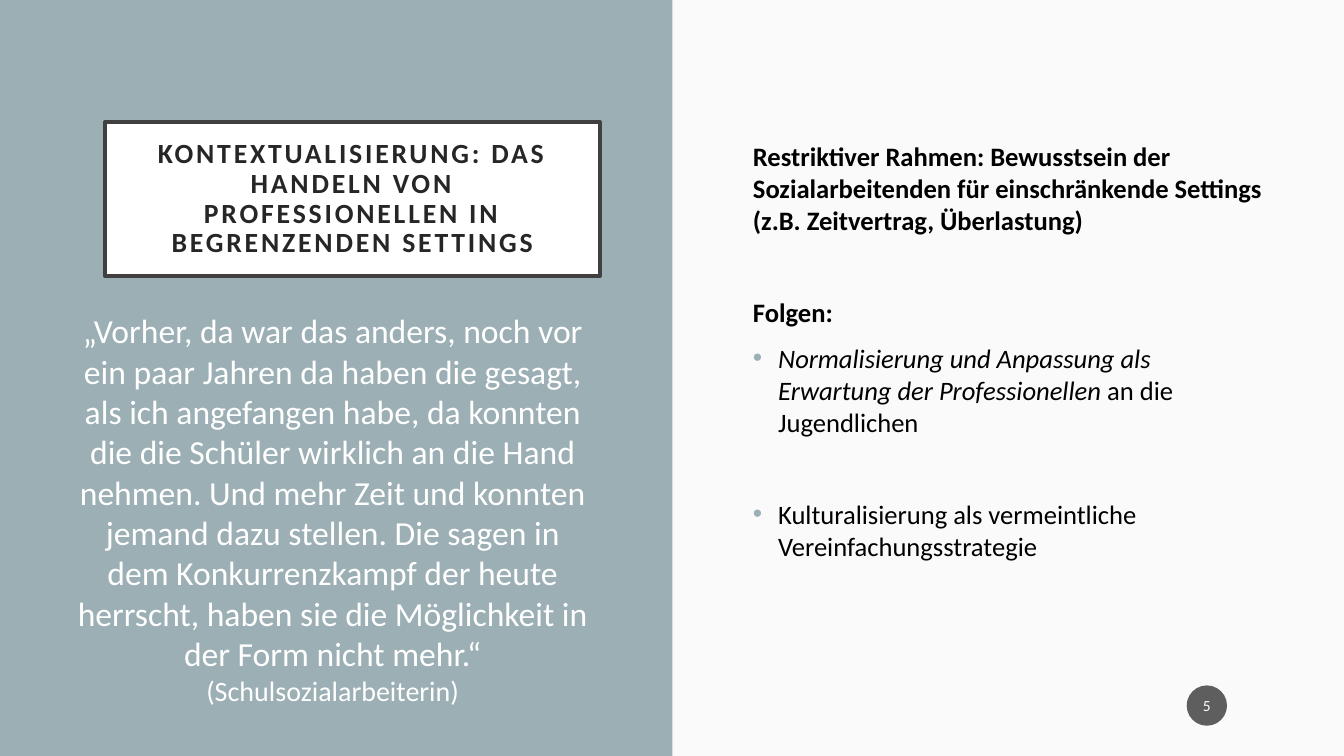
from lxml import etree
from pptx import Presentation
from pptx.dml.color import RGBColor
from pptx.enum.shapes import MSO_SHAPE
from pptx.enum.text import MSO_ANCHOR, MSO_AUTO_SIZE, PP_ALIGN
from pptx.oxml.ns import qn
from pptx.util import Inches, Pt

RECTANGLE, OVAL = MSO_SHAPE.RECTANGLE, MSO_SHAPE.OVAL
LEFT, CENTER = PP_ALIGN.LEFT, PP_ALIGN.CENTER
TOP, MIDDLE = MSO_ANCHOR.TOP, MSO_ANCHOR.MIDDLE
FIXED_SIZE = MSO_AUTO_SIZE.NONE

FONT = "Calibri"
ACCENT, WHITE, BLACK = "9BAFB5", "FFFFFF", "000000"
BACKGROUND, BADGE = "FAFAFA", "1D1D1D"
TITLE_TEXT, TITLE_BORDER = "262626", "404040"

TITLE = "KONTEXTUALISIERUNG: DAS HANDELN VON PROFESSIONELLEN IN BEGRENZENDEN SETTINGS"
QUOTE = ("„Vorher, da war das anders, noch vor ein paar Jahren da haben die gesagt, "
         "als ich angefangen habe, da konnten die die Schüler wirklich an die Hand nehmen. "
         "Und mehr Zeit und konnten jemand dazu stellen. Die sagen in dem Konkurrenzkampf "
         "der heute herrscht, haben sie die Möglichkeit in der Form nicht mehr.“ ")
SPEAKER = "(Schulsozialarbeiterin)"
PAGE_NUMBER = "5"
# Each point: runs of (text, format), space before in points, bulleted
POINTS = [
    ([("Restriktiver Rahmen: Bewusstsein der Sozialarbeitenden für einschränkende "
       "Settings (z.B. Zeitvertrag, Überlastung)", {"bold": True})], 0, False),
    ([("Folgen:", {"bold": True})], 43, False),
    ([("Normalisierung und Anpassung als Erwartung der Professionellen ", {"italic": True}),
      ("an die Jugendlichen", {})], 10, True),
    ([("Kulturalisierung als vermeintliche Vereinfachungsstrategie", {})], 43, True),
]


def color(hex_string):
    return RGBColor.from_string(hex_string)


def add_text(paragraph, text, size=19, fill=BLACK, bold=False, italic=False, tracking=0):
    run = paragraph.add_run()
    run.text = text
    font = run.font
    font.name, font.size, font.bold, font.italic = FONT, Pt(size), bold, italic
    font.color.rgb = color(fill)
    if tracking:
        font._element.set("spc", str(tracking * 100))


def add_bullet(paragraph, indent=0.25):
    properties = paragraph._p.get_or_add_pPr()
    properties.set("marL", str(Inches(indent)))
    properties.set("indent", str(-Inches(indent)))
    bullet_color = etree.SubElement(properties, qn("a:buClr"))
    etree.SubElement(bullet_color, qn("a:srgbClr"), val=ACCENT)
    etree.SubElement(properties, qn("a:buFont"), typeface="Arial")
    etree.SubElement(properties, qn("a:buChar"), char="•")


def place(shape, left, top, width, height):
    shape.left, shape.top = Inches(left), Inches(top)
    shape.width, shape.height = Inches(width), Inches(height)


def set_frame(shape, anchor=TOP, align=LEFT, insets=(0.1, 0.05)):
    """Format the text frame and return its first paragraph."""
    frame = shape.text_frame
    frame.word_wrap = True
    frame.auto_size = FIXED_SIZE
    frame.vertical_anchor = anchor
    frame.margin_left = frame.margin_right = Inches(insets[0])
    frame.margin_top = frame.margin_bottom = Inches(insets[1])
    frame.paragraphs[0].alignment = align
    return frame.paragraphs[0]


def add_box(slide, left, top, width, height):
    return slide.shapes.add_textbox(Inches(left), Inches(top), Inches(width), Inches(height))


def add_filled(slide, kind, left, top, width, height, fill):
    shape = slide.shapes.add_shape(kind, Inches(left), Inches(top), Inches(width), Inches(height))
    shape.shadow.inherit = False
    shape.fill.solid()
    shape.fill.fore_color.rgb = color(fill)
    shape.line.fill.background()
    return shape


def add_title(slide):
    title = slide.shapes.title
    place(title, 1.04, 1.21, 4.91, 1.53)
    title.fill.solid()
    title.fill.fore_color.rgb = color(WHITE)
    title.line.color.rgb = color(TITLE_BORDER)
    title.line.width = Pt(2.5)
    paragraph = set_frame(title, MIDDLE, CENTER, (0.2, 0.2))
    paragraph.line_spacing = 0.9
    add_text(paragraph, TITLE, size=19.8, fill=TITLE_TEXT, bold=True, tracking=2)


def add_points(slide):
    box = add_box(slide, 7.37, 1.34, 5.27, 5.28)
    paragraph = set_frame(box)
    for index, (runs, space_before, bulleted) in enumerate(POINTS):
        if index:
            paragraph = box.text_frame.add_paragraph()
        paragraph.space_before = Pt(space_before)
        if bulleted:
            add_bullet(paragraph)
        for text, text_format in runs:
            add_text(paragraph, text, **text_format)


def add_quote(slide):
    paragraph = set_frame(add_box(slide, 0.66, 3.03, 5.28, 3.92), align=CENTER)
    add_text(paragraph, QUOTE, size=24, fill=WHITE)
    add_text(paragraph, SPEAKER, size=20, fill=WHITE)


def add_page_number(slide):
    badge = add_filled(slide, OVAL, 11.77, 6.8, 0.4, 0.4, BADGE)
    badge_color = badge.fill._xPr.find(qn("a:solidFill"))[0]
    etree.SubElement(badge_color, qn("a:alpha"), val="70000")
    paragraph = set_frame(badge, MIDDLE, CENTER, (0.02, 0.05))
    add_text(paragraph, PAGE_NUMBER, size=11, fill=WHITE)


def main():
    presentation = Presentation()
    presentation.slide_width, presentation.slide_height = Inches(13.33), Inches(7.5)
    slide = presentation.slides.add_slide(presentation.slide_layouts[5])
    slide.background.fill.solid()
    slide.background.fill.fore_color.rgb = color(BACKGROUND)
    panel = add_filled(slide, RECTANGLE, 0, 0, 6.67, 7.5, ACCENT)
    slide.shapes.title.element.addprevious(panel.element)
    add_title(slide)
    add_points(slide)
    add_quote(slide)
    add_page_number(slide)
    presentation.save("out.pptx")


if __name__ == "__main__":
    main()
